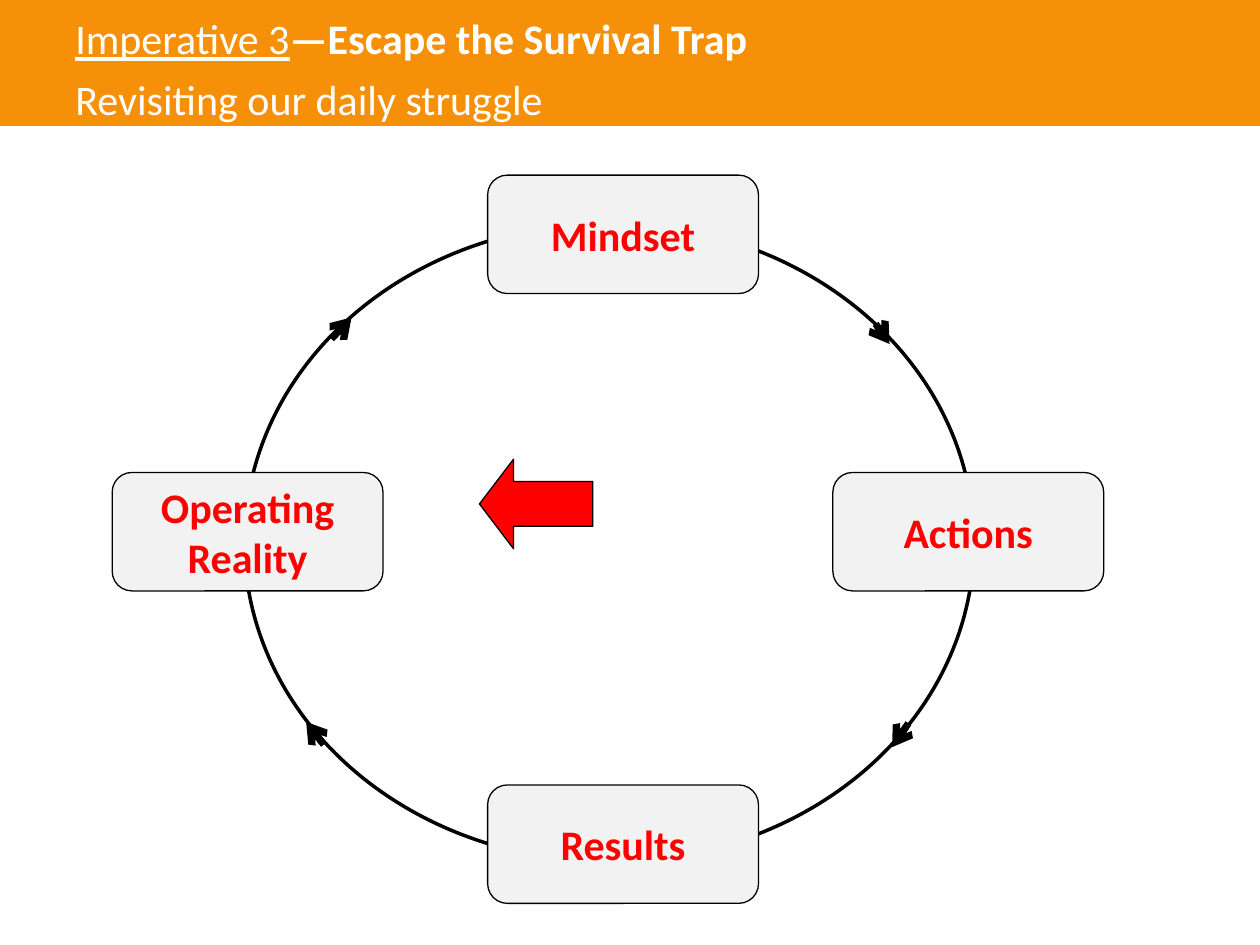
from lxml.etree import SubElement
from pptx import Presentation
from pptx.dml.color import RGBColor
from pptx.enum.dml import MSO_LINE
from pptx.enum.shapes import MSO_CONNECTOR, MSO_SHAPE
from pptx.enum.text import MSO_ANCHOR, PP_ALIGN
from pptx.oxml.ns import qn
from pptx.util import Inches, Pt

COLORS = {"band": "F69008", "paper": "FFFFFF", "node": "F2F2F2",
          "ink": "000000", "accent": "FF0000"}
COLUMNS, ROWS = 100, 75
CELL = Inches(10) // COLUMNS


def color(name):
    return RGBColor.from_string(COLORS[name])


def cells(*lengths):
    return [round(length * CELL) for length in lengths]


def add_block(slide, preset, box, fill, line_width=None):
    block = slide.shapes.add_shape(preset, *cells(*box))
    block.shadow.inherit = False
    block.fill.solid()
    block.fill.fore_color.rgb = color(fill)
    if line_width:
        block.line.color.rgb = color("ink")
        block.line.width = Pt(line_width)
    else:
        block.line.fill.background()
    return block


def style(paragraph, fill):
    paragraph.font.name = "Calibri"
    paragraph.font.size = Pt(24)
    paragraph.font.color.rgb = color(fill)


def add_header(slide, box):
    left, top, width, height = box
    add_block(slide, MSO_SHAPE.RECTANGLE, box, "band")
    title = slide.shapes.add_textbox(*cells(left + 5, top, width - 23.4, height))
    frame = title.text_frame
    frame.word_wrap = True
    frame.vertical_anchor = MSO_ANCHOR.MIDDLE
    heading, subtitle = frame.paragraphs[0], frame.add_paragraph()
    imperative = heading.add_run()
    imperative.text = "Imperative 3"
    imperative.font.underline = True
    message = heading.add_run()
    message.text = "—Escape the Survival Trap"
    message.font.bold = True
    subtitle.text = "Revisiting our daily struggle"
    for paragraph in (heading, subtitle):
        style(paragraph, "paper")
        paragraph.line_spacing = Pt(35)


def add_node(slide, box, label):
    node = add_block(slide, MSO_SHAPE.ROUNDED_RECTANGLE, box, "node", 0.75)
    frame = node.text_frame
    frame.word_wrap = True
    frame.vertical_anchor = MSO_ANCHOR.MIDDLE
    paragraph = frame.paragraphs[0]
    paragraph.text = label
    paragraph.alignment = PP_ALIGN.CENTER
    style(paragraph, "accent")
    paragraph.font.bold = True


def add_direction(slide, start, end):
    direction = slide.shapes.add_connector(
        MSO_CONNECTOR.STRAIGHT, *cells(*start, *end))
    direction.line.color.rgb = color("ink")
    direction.line.width = Pt(4)
    direction.line.dash_style = MSO_LINE.SQUARE_DOT
    SubElement(direction.line._get_or_add_ln(), qn("a:tailEnd"), type="arrow")
    SubElement(direction._element.spPr, qn("a:effectLst"))


def add_cycle(slide, box):
    left, top, width, height = box
    node_width, node_height = 21.5, 9.4
    middle_x = left + 29.8
    middle_y = top + 23.6
    right = left + width - node_width
    bottom = top + height - node_height

    add_block(slide, MSO_SHAPE.OVAL, (left + 10.5, top + 3.8, 57.9, 50.7),
              "paper", 2)
    nodes = [("Mindset", middle_x, top), ("Operating Reality", left, middle_y),
             ("Actions", right, middle_y), ("Results", middle_x, bottom)]
    for label, x, y in nodes:
        add_node(slide, (x, y, node_width, node_height), label)

    directions = [(60.8, 12.1, 0.9, 1.3), (16.8, 45.2, -1.4, -1.8),
                  (63.2, 43.5, -1.3, 1.9), (17.4, 13, 1.6, -1.7)]
    for x, y, run, rise in directions:
        start = (left + x, top + y)
        add_direction(slide, start, (start[0] + run, start[1] + rise))


def add_pointer(slide, box):
    pointer = add_block(slide, MSO_SHAPE.DOWN_ARROW, box, "accent", 0.75)
    pointer.rotation = 90
    pointer.adjustments[0] = 0.5
    pointer.adjustments[1] = 0.38


def main():
    deck = Presentation()
    deck.slide_width, deck.slide_height = cells(COLUMNS, ROWS)
    slide = deck.slides.add_slide(deck.slide_layouts[6])
    add_header(slide, (0, 0, COLUMNS, 10))
    add_cycle(slide, (8.9, 13.9, 78.7, 57.8))
    add_pointer(slide, (39, 35.5, 7.1, 9))
    deck.save("out.pptx")


if __name__ == "__main__":
    main()
